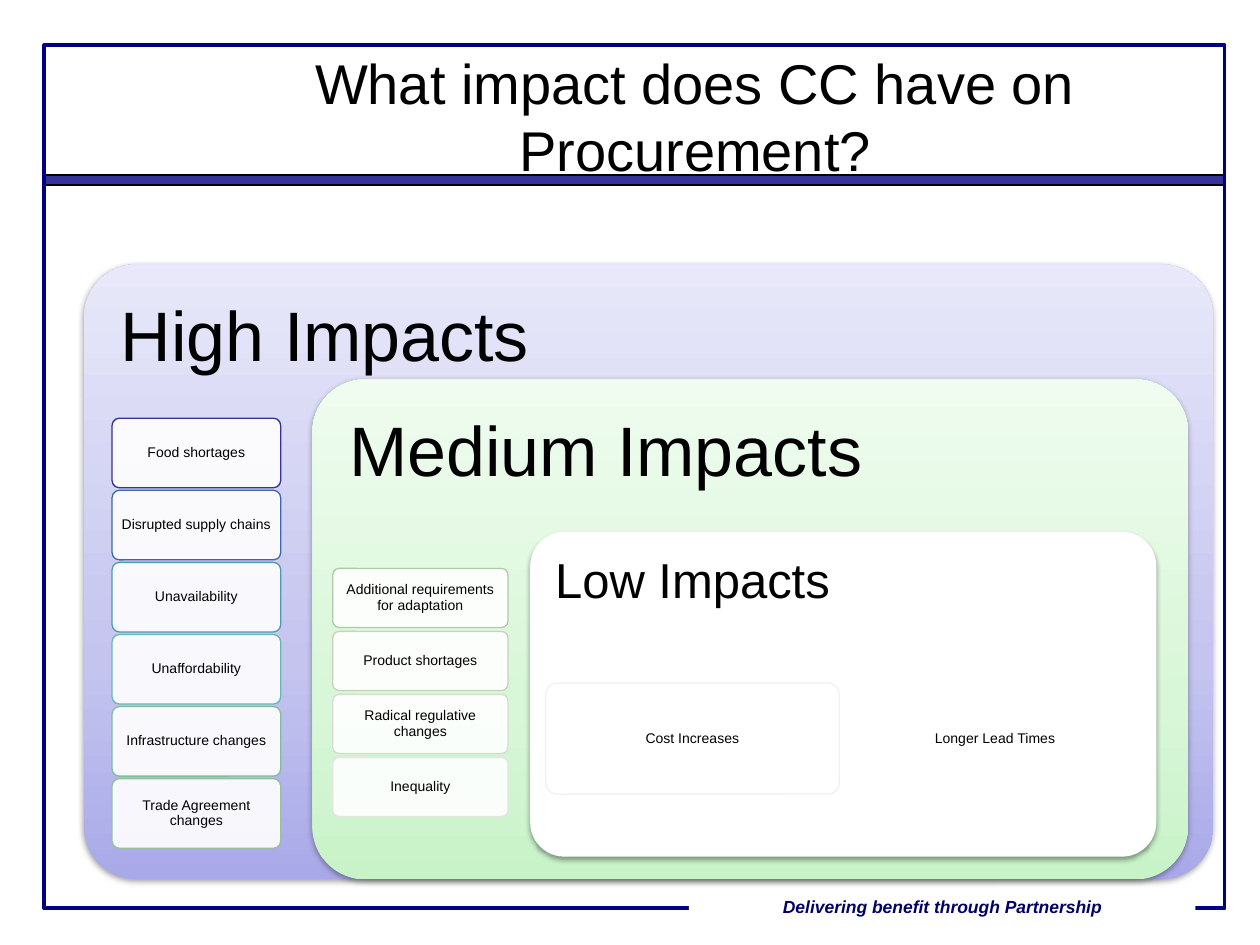
import pptx
import pptx.dml.color
import pptx.enum.shapes
import pptx.enum.text
import pptx.oxml.ns
import pptx.util
from lxml import etree

Cm, Pt = pptx.util.Cm, pptx.util.Pt
RGBColor = pptx.dml.color.RGBColor
SHAPE = pptx.enum.shapes.MSO_SHAPE
ALIGN = pptx.enum.text.PP_ALIGN
ANCHOR = pptx.enum.text.MSO_ANCHOR
qn = pptx.oxml.ns.qn

BLACK = RGBColor(0x00, 0x00, 0x00)
WHITE = RGBColor(0xFF, 0xFF, 0xFF)
NAVY = RGBColor(0x00, 0x00, 0x80)
INDIGO = RGBColor(0x33, 0x33, 0x99)
FOOTER_BLUE = RGBColor(0x00, 0x00, 0x66)
# Gradient colours run from the bottom of a panel to its top
LAVENDERS = [RGBColor(0xA9, 0xA9, 0xE9), RGBColor(0xC4, 0xC4, 0xEF), RGBColor(0xE8, 0xE8, 0xFA)]
GREENS = [RGBColor(0xC8, 0xF3, 0xC8), RGBColor(0xD8, 0xF6, 0xD8), RGBColor(0xEF, 0xFC, 0xEF)]
GRADIENT_STOPS = [0, 35, 100]

HIGH_CARDS = [
    ("Food shortages", INDIGO),
    ("Disrupted supply chains", RGBColor(0x3F, 0x66, 0xA9)),
    ("Unavailability", RGBColor(0x4F, 0x99, 0xB5)),
    ("Unaffordability", RGBColor(0x67, 0xB8, 0xB1)),
    ("Infrastructure changes", RGBColor(0x7F, 0xBD, 0xA0)),
    ("Trade Agreement changes", RGBColor(0x95, 0xC2, 0x9D)),
]
MEDIUM_CARDS = [
    ("Additional requirements for adaptation", RGBColor(0xAF, 0xC9, 0xAA)),
    ("Product shortages", RGBColor(0xC8, 0xD1, 0xBD)),
    ("Radical regulative changes", RGBColor(0xDA, 0xDB, 0xD0)),
    ("Inequality", RGBColor(0xE6, 0xE4, 0xE1)),
]
LOW_CARDS = [
    ("Cost Increases", RGBColor(0xF2, 0xF1, 0xF0)),
    ("Longer Lead Times", WHITE),
]


def add_box(page, kind, box, fill=None, line=None, weight=0.75):
    """Add a preset shape; box is left, top, width, height in centimetres."""
    shape = page.shapes.add_shape(kind, *[Cm(length) for length in box])
    shape.shadow.inherit = False
    if fill is None:
        shape.fill.background()
    else:
        shape.fill.solid()
        shape.fill.fore_color.rgb = fill
    if line is None:
        shape.line.fill.background()
    else:
        shape.line.color.rgb = line
        shape.line.width = Pt(weight)
    return shape


def write_text(shape, text, size, color=BLACK, align=ALIGN.CENTER,
               anchor=ANCHOR.MIDDLE, inset=None, spacing=None):
    frame = shape.text_frame
    frame.word_wrap = True
    frame.auto_size = pptx.enum.text.MSO_AUTO_SIZE.NONE
    frame.vertical_anchor = anchor
    if inset is not None:
        frame.margin_left = frame.margin_right = Cm(inset)
        frame.margin_top = frame.margin_bottom = Cm(inset)
    frame.text = text
    para = frame.paragraphs[0]
    para.alignment = align
    if spacing is not None:
        para.line_spacing = spacing
    font = para.runs[0].font
    font.name, font.size, font.color.rgb = "Arial", Pt(size), color
    return font


def set_gradient(shape, colors):
    shape.fill.gradient()
    shape.fill.gradient_angle = 90
    stops = shape._element.spPr.find(".//" + qn("a:gsLst"))
    for stop in list(stops):
        stops.remove(stop)
    for position, color in zip(GRADIENT_STOPS, colors):
        stop = etree.SubElement(stops, qn("a:gs"), pos=str(position * 1000))
        etree.SubElement(stop, qn("a:srgbClr"), val=str(color))


def set_shadow(shape):
    effects = shape._element.spPr.find(qn("a:effectLst"))
    shadow = etree.SubElement(
        effects, qn("a:outerShdw"), blurRad=str(Pt(3.1)), dist=str(Pt(1.6)),
        dir="5400000", rotWithShape="0")
    color = etree.SubElement(shadow, qn("a:srgbClr"), val=str(BLACK))
    etree.SubElement(color, qn("a:alpha"), val="38000")


def add_frame(page, box):
    """Border, title bar and footer tag."""
    left, top, width, height = box
    add_box(page, SHAPE.RECTANGLE, (left, top + 2.62, width, 0.2), INDIGO, BLACK)
    add_box(page, SHAPE.RECTANGLE, box, line=NAVY, weight=2)
    tag = add_box(page, SHAPE.RECTANGLE, (left + 13, top + height - 0.38, 10.21, 0.69), WHITE)
    font = write_text(tag, "Delivering benefit through Partnership", 10, FOOTER_BLUE)
    font.bold = font.italic = True


def place_title(page, box):
    title = page.shapes.title
    title.left, title.top, title.width, title.height = [Cm(length) for length in box]
    write_text(title, "What impact does CC have on Procurement?", 32)


def add_panel(page, box, heading, size, inset, corner, colors=None):
    panel = add_box(page, SHAPE.ROUNDED_RECTANGLE, box, WHITE)
    panel.adjustments[0] = corner
    if colors:
        set_gradient(panel, colors)
    set_shadow(panel)
    write_text(panel, heading, size, align=ALIGN.LEFT, anchor=ANCHOR.TOP,
               inset=inset, spacing=0.9)


def add_cards(page, box, cards, gap, across=False):
    """Share the box equally among the cards, down it or across it."""
    left, top, width, height = box
    count = len(cards)
    step = ((width if across else height) + gap) / count
    for index, (text, line) in enumerate(cards):
        if across:
            card_box = (left + index * step, top, step - gap, height)
        else:
            card_box = (left, top + index * step, width, step - gap)
        card = add_box(page, SHAPE.ROUNDED_RECTANGLE, card_box, WHITE, line)
        card.adjustments[0] = 0.105
        color = card._element.spPr.find(qn("a:solidFill")).find(qn("a:srgbClr"))
        etree.SubElement(color, qn("a:alpha"), val="90000")
        write_text(card, text, 8, inset=0.08, spacing=0.9)


def add_high_impacts(page, box):
    left, top = box[:2]
    add_panel(page, box, "High Impacts", 40, 0.43, 0.085, LAVENDERS)
    add_cards(page, (left + 0.56, top + 3.1, 3.4, 8.67), HIGH_CARDS, 0.05)


def add_medium_impacts(page, box):
    left, top = box[:2]
    add_panel(page, box, "Medium Impacts", 40, 0.43, 0.105, GREENS)
    add_cards(page, (left + 0.41, top + 3.81, 3.53, 5), MEDIUM_CARDS, 0.08)


def add_low_impacts(page, box):
    left, top = box[:2]
    add_panel(page, box, "Low Impacts", 28, 0.3, 0.105)
    add_cards(page, (left + 0.31, top + 3.05, 12.02, 2.24), LOW_CARDS, 0.18, across=True)


def main():
    deck = pptx.Presentation()
    deck.slide_width, deck.slide_height = Cm(25.4), Cm(19.05)
    page = deck.slides.add_slide(deck.slide_layouts[5])

    add_frame(page, (0.89, 0.91, 23.8, 17.4))
    place_title(page, (3.51, 1.32, 21.01, 2.01))

    # Nested impact panels, outermost first
    add_high_impacts(page, (1.7, 5.33, 22.76, 12.4))
    add_medium_impacts(page, (6.3, 7.65, 17.65, 10.08))
    add_low_impacts(page, (10.69, 10.72, 12.62, 6.55))

    deck.save("out.pptx")


if __name__ == "__main__":
    main()
